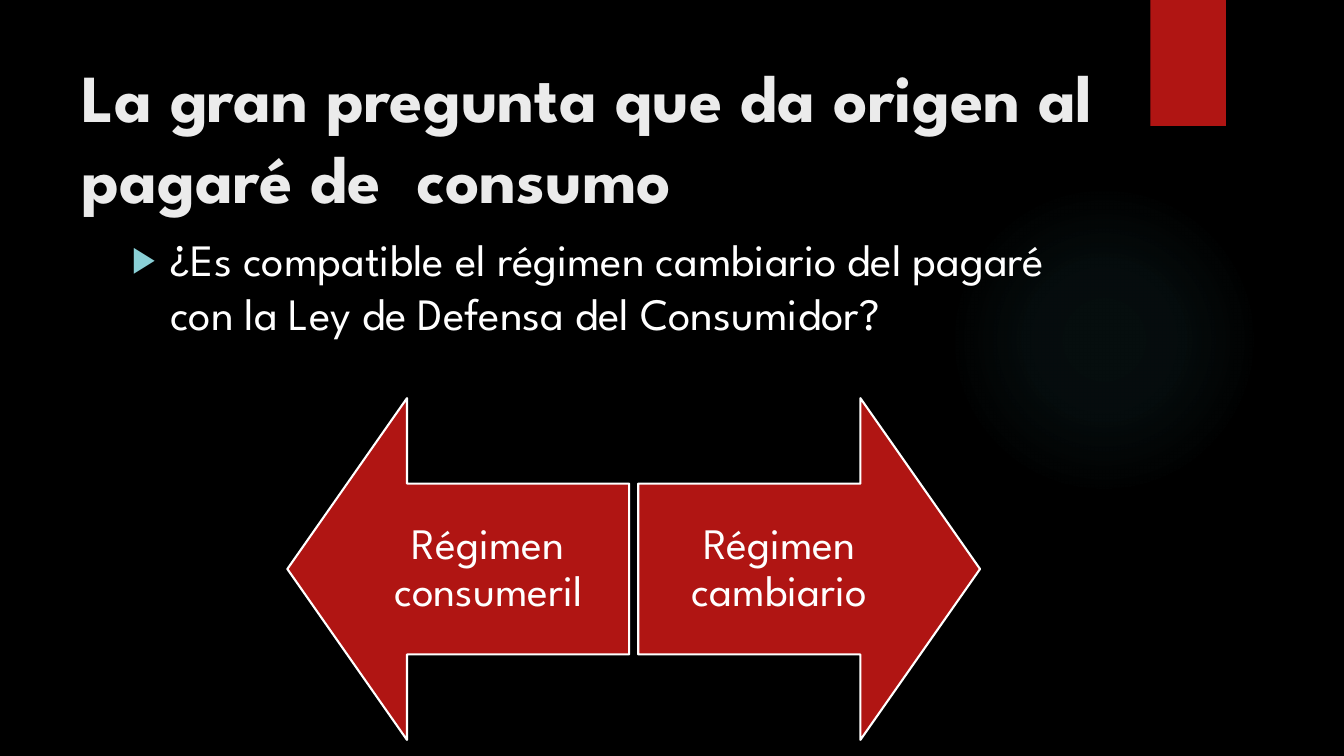
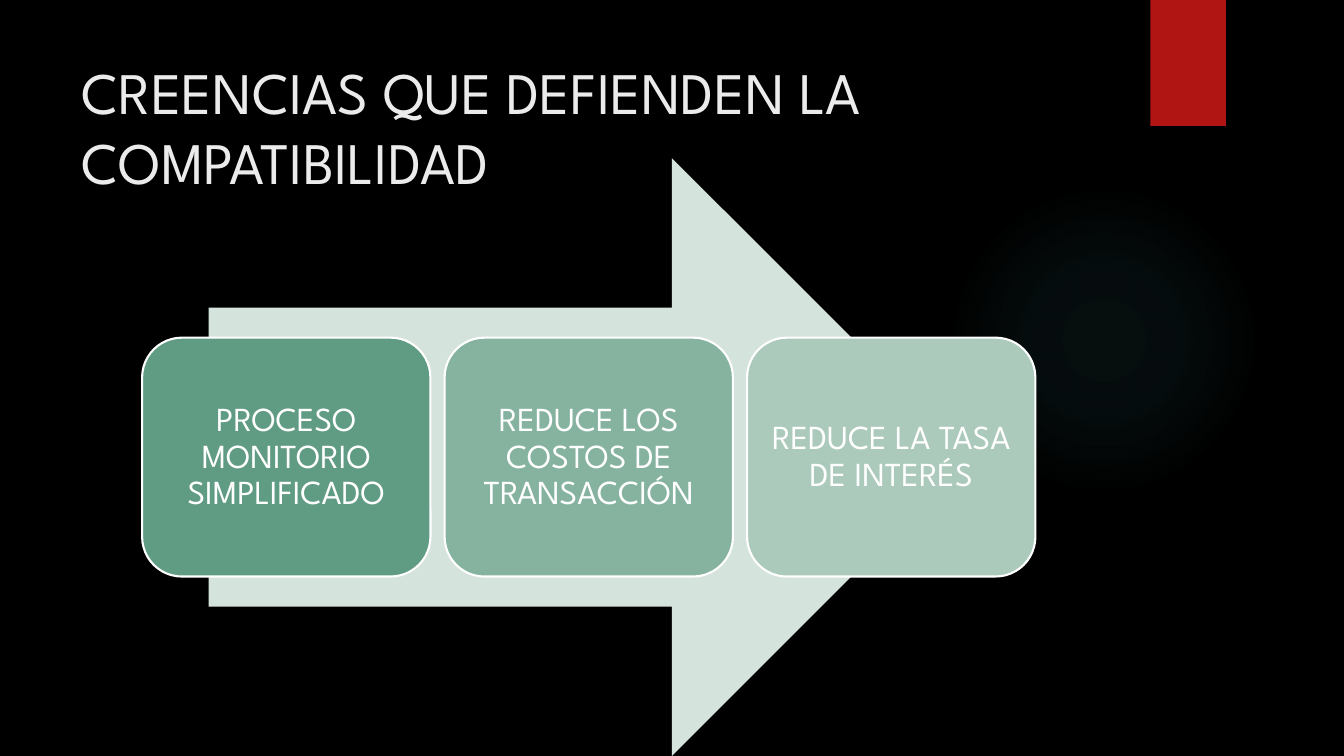
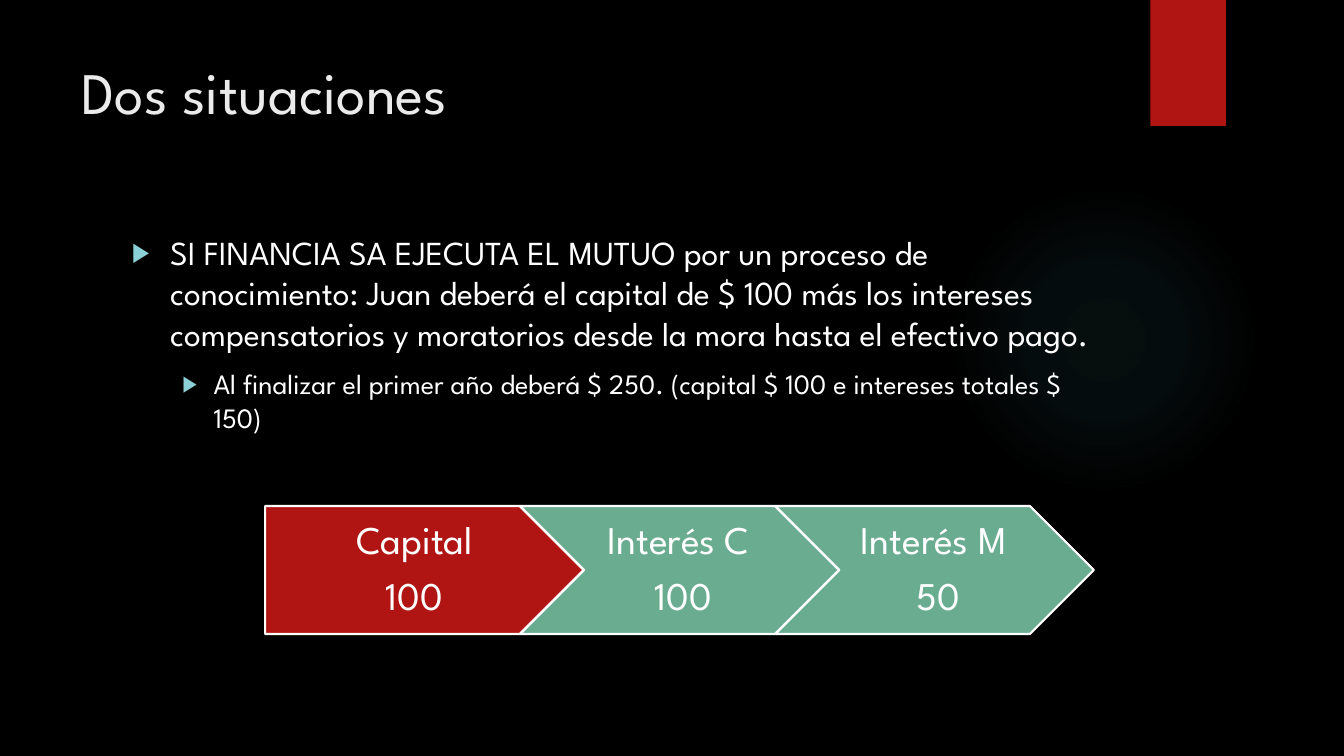
from lxml import etree
from pptx import Presentation
from pptx.dml.color import RGBColor
from pptx.enum import shapes, text
from pptx.oxml import parse_xml
from pptx.oxml.ns import nsdecls, qn
from pptx.util import Inches, Pt

BLACK = RGBColor(0x00, 0x00, 0x00)
WHITE = RGBColor(0xFF, 0xFF, 0xFF)
TITLE_GREY = RGBColor(0xEB, 0xEB, 0xEB)
RED = RGBColor(0xB0, 0x15, 0x13)
GLOW_TEAL = RGBColor(0x50, 0xB9, 0xC1)
BULLET_TEAL = RGBColor(0x8A, 0xD0, 0xD6)
GREEN = RGBColor(0x6A, 0xAC, 0x90)
PALE_GREEN = RGBColor(0xD4, 0xE3, 0xDB)
GREEN_STEPS = (
    RGBColor(0x60, 0x9C, 0x83),
    RGBColor(0x85, 0xB3, 0x9F),
    RGBColor(0xAB, 0xCA, 0xBB),
)
FONT = "League Spartan"
PRESET = shapes.MSO_SHAPE
GLOW_STOPS = ((0, 7), (36, 6), (69, 0))
BULLET_INDENTS = ((0.38, 0.38), (0.81, 0.31))


class Deck:
    def __init__(self):
        self.prs = Presentation()
        self.prs.slide_width = Inches(13.33)
        self.prs.slide_height = Inches(7.5)
        self.slide = None

    def add_slide(self, title, size=42, bold=False):
        self.slide = self.prs.slides.add_slide(self.prs.slide_layouts[5])
        background = self.slide.background.fill
        background.solid()
        background.fore_color.rgb = BLACK
        self.glow()
        self.shape(PRESET.RECTANGLE, 11.41, 0, 0.75, 1.25, RED)
        heading = self.slide.shapes.title
        heading.left, heading.top = Inches(0.71), Inches(0.5)
        heading.width, heading.height = Inches(10.29), Inches(1.53)
        frame = heading.text_frame
        frame.auto_size = text.MSO_AUTO_SIZE.NONE
        frame.vertical_anchor = text.MSO_ANCHOR.TOP
        paragraph = frame.paragraphs[0]
        paragraph.alignment = text.PP_ALIGN.LEFT
        self.run(paragraph, title, size, TITLE_GREY, bold)

    def run(self, paragraph, words, size, color=WHITE, bold=False):
        run = paragraph.add_run()
        run.text = words
        run.font.name = FONT
        run.font.size = Pt(size)
        run.font.bold = bold
        run.font.color.rgb = color

    def shape(self, preset, left, top, width, height, fill, outlined=False):
        shape = self.slide.shapes.add_shape(
            preset, Inches(left), Inches(top), Inches(width), Inches(height))
        shape.shadow.inherit = False
        shape.fill.solid()
        shape.fill.fore_color.rgb = fill
        if outlined:
            shape.line.color.rgb = WHITE
            shape.line.width = Pt(1.5)
        else:
            shape.line.fill.background()
        return shape

    def glow(self):
        circle = self.shape(PRESET.OVAL, 9.41, 1.83, 3.08, 3.08, GLOW_TEAL)
        stops = "".join(
            f'<a:gs pos="{pos * 1000}"><a:srgbClr val="{GLOW_TEAL}">'
            f'<a:alpha val="{alpha * 1000}"/></a:srgbClr></a:gs>'
            for pos, alpha in GLOW_STOPS)
        gradient = parse_xml(
            f'<a:gradFill {nsdecls("a")}><a:gsLst>{stops}</a:gsLst>'
            '<a:path path="circle"><a:fillToRect l="50000" t="50000" '
            'r="50000" b="50000"/></a:path></a:gradFill>')
        properties = circle.fill._xPr
        properties.replace(properties.find(qn("a:solidFill")), gradient)

    def block(self, preset, box, fill, lines, size, insets, gap=10):
        shape = self.shape(preset, *box, fill, outlined=True)
        frame = shape.text_frame
        frame.word_wrap = True
        frame.vertical_anchor = text.MSO_ANCHOR.MIDDLE
        (frame.margin_left, frame.margin_top,
         frame.margin_right, frame.margin_bottom) = map(Inches, insets)
        for index, line in enumerate(lines):
            paragraph = frame.add_paragraph() if index else frame.paragraphs[0]
            paragraph.alignment = text.PP_ALIGN.CENTER
            paragraph.line_spacing = 0.9
            paragraph.space_after = Pt(gap)
            self.run(paragraph, line, size)
        return shape

    def bullets(self, items):
        body = self.slide.shapes.add_textbox(
            Inches(1.21), Inches(2.25), Inches(9.78), Inches(4.59))
        frame = body.text_frame
        frame.word_wrap = True
        for index, (level, words, size) in enumerate(items):
            paragraph = frame.add_paragraph() if index else frame.paragraphs[0]
            paragraph.level = level
            if index:
                paragraph.space_before = Pt(10)
            margin, hanging = BULLET_INDENTS[level]
            properties = paragraph._p.get_or_add_pPr()
            properties.set("marL", str(Inches(margin)))
            properties.set("indent", str(-Inches(hanging)))
            color = etree.SubElement(properties, qn("a:buClr"))
            etree.SubElement(color, qn("a:srgbClr"), val=str(BULLET_TEAL))
            etree.SubElement(properties, qn("a:buSzPct"), val="80000")
            etree.SubElement(properties, qn("a:buFont"), typeface="Arial")
            etree.SubElement(properties, qn("a:buChar"), char="▶")
            self.run(paragraph, words, size)


def question_slide(deck):
    deck.add_slide("La gran pregunta que da origen al pagaré de  consumo", 48, True)
    deck.bullets([(0, "¿Es compatible el régimen cambiario del pagaré con la Ley "
                      "de Defensa del Consumidor?", 32)])
    regimes = (
        (PRESET.LEFT_ARROW, 2.85, "Régimen consumeril", (0.24, 0.24, 0.24, 0.24)),
        (PRESET.RIGHT_ARROW, 6.33, "Régimen cambiario", (0.24, 0.24, 0.24, 0.24)),
    )
    for preset, left, regime, insets in regimes:
        arrow = deck.block(preset, (left, 3.95, 3.39, 3.39), RED, [regime], 31, insets)
        arrow.adjustments[0] = 0.5
        arrow.adjustments[1] = 0.35


def beliefs_slide(deck):
    deck.add_slide("CREENCIAS QUE DEFIENDEN LA COMPATIBILIDAD")
    deck.shape(PRESET.RIGHT_ARROW, 2.07, 1.57, 7.56, 5.93, PALE_GREEN)
    beliefs = (
        "PROCESO MONITORIO SIMPLIFICADO",
        "REDUCE LOS COSTOS DE TRANSACCIÓN",
        "REDUCE LA TASA DE INTERÉS",
    )
    for index, (belief, green) in enumerate(zip(beliefs, GREEN_STEPS)):
        deck.block(PRESET.ROUNDED_RECTANGLE, (1.41 + 3 * index, 3.35, 2.86, 2.37),
                   green, [belief], 24, (0.1, 0.1, 0.1, 0.1))


def situations_slide(deck):
    deck.add_slide("Dos situaciones")
    deck.bullets([
        (0, "SI FINANCIA SA EJECUTA EL MUTUO por un proceso de conocimiento: Juan "
            "deberá el capital de $ 100 más los intereses compensatorios y "
            "moratorios desde la mora hasta el efectivo pago.", 24),
        (1, "Al finalizar el primer año deberá $ 250. (capital $ 100 e intereses "
            "totales $ 150)", 20),
    ])
    debts = (
        (PRESET.PENTAGON, RED, ("Capital", "100"), 0.16),
        (PRESET.CHEVRON, GREEN, ("Interés C ", "100"), 0.12),
        (PRESET.CHEVRON, GREEN, ("Interés M ", "50"), 0.12),
    )
    for index, (preset, fill, debt, inset) in enumerate(debts):
        deck.block(preset, (2.63 + 2.53 * index, 5.02, 3.16, 1.27), fill, debt, 28,
                   (inset, 0.08, 0.04, 0.08))


def main():
    deck = Deck()
    question_slide(deck)
    beliefs_slide(deck)
    situations_slide(deck)
    deck.prs.save("out.pptx")


if __name__ == "__main__":
    main()
